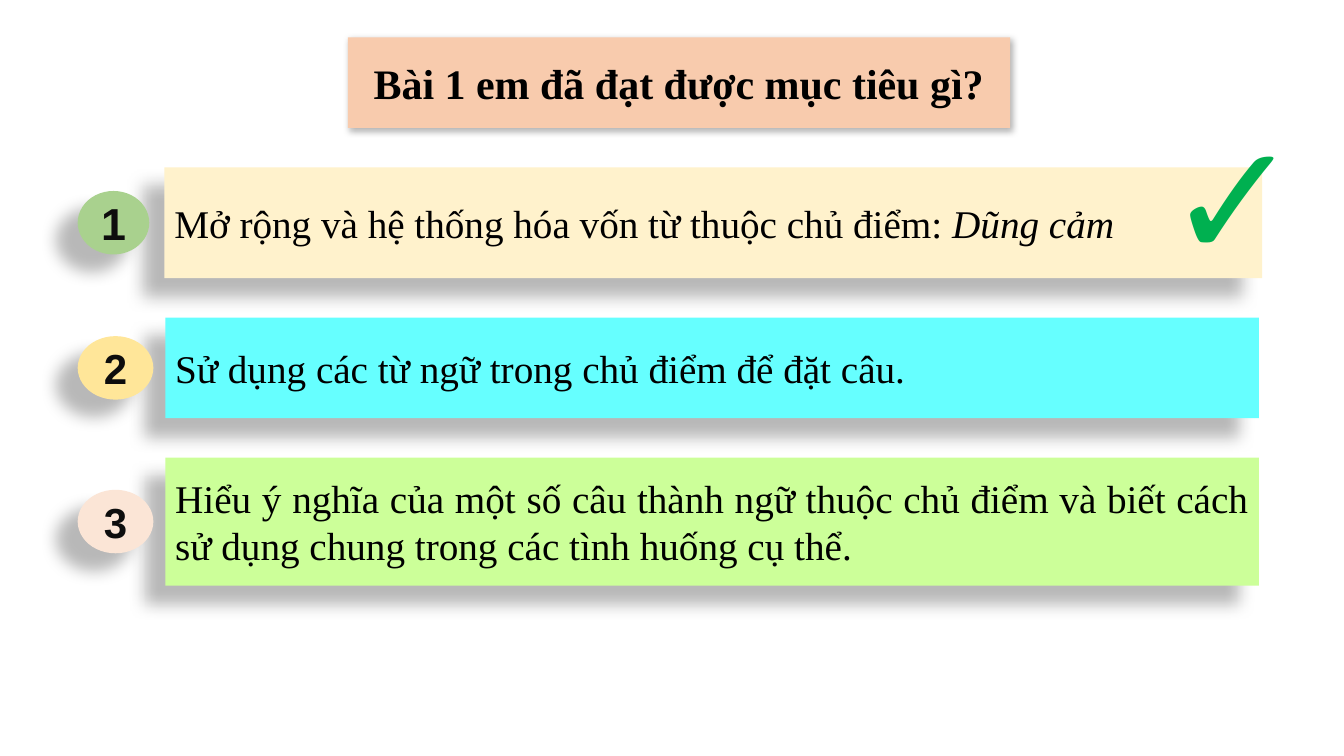
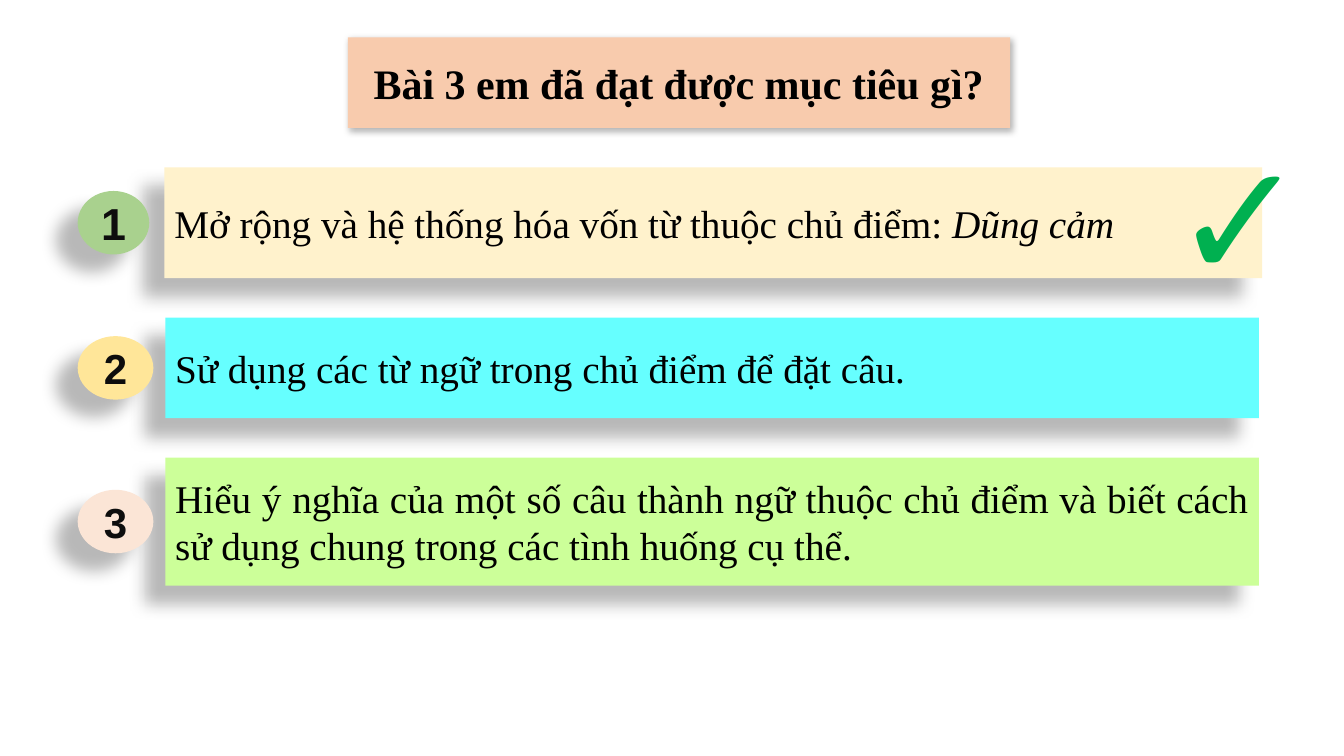
"""Build two lesson slides that review the goals reached in an exercise."""
from lxml.etree import SubElement
from pptx import Presentation
from pptx.dml.color import RGBColor
from pptx.enum.shapes import MSO_SHAPE
from pptx.enum.text import MSO_ANCHOR, MSO_AUTO_SIZE, PP_ALIGN
from pptx.oxml.ns import qn
from pptx.util import Inches, Pt

THEME = {
    "fonts": {
        "title": {"name": "Times New Roman", "size": Pt(30), "bold": True},
        "body": {"name": "Times New Roman", "size": Pt(28)},
        "badge": {"name": "Arial", "bold": True},
        "tick": {"name": "Calibri", "size": Pt(115)},
    },
    "inks": {"title": "000000", "body": "000000", "badge": "0D0D0D", "tick": "00B050"},
    "title": "F8CBAD",
    "shadows": {
        "title": {"blur": 4.5, "dist": 2.6, "angle": 53, "alpha": 30},
        "goal": {"blur": 11.8, "dist": 19.7, "angle": 141, "alpha": 28},
    },
}

GOALS = [
    {"bar": "FFF2CC", "dot": "A9D18E", "size": 32, "left": 12.23, "wide": 81.68,
     "high": 14.67, "dot_wide": 5.33,
     "text": [("Mở rộng và hệ thống hóa vốn từ thuộc chủ điểm: ", False), ("Dũng cảm", True)]},
    {"bar": "66FFFF", "dot": "FFE699", "size": 30, "left": 12.3, "wide": 81.38,
     "high": 13.33, "dot_wide": 5.63,
     "text": [("Sử dụng các từ ngữ trong chủ điểm để đặt câu.", False)]},
    {"bar": "CCFF99", "dot": "FBE5D6", "size": 30, "left": 12.3, "wide": 81.38,
     "high": 16.93, "dot_wide": 5.63,
     "text": [("Hiểu ý nghĩa của một số câu thành ngữ thuộc chủ điểm và biết cách "
               "sử dụng chung trong các tình huống cụ thể.", False)]},
]
PAGES = [
    {"title": "Bài 1 em đã đạt được mục tiêu gì?", "tick": (86.03, 12.27)},
    {"title": "Bài 3 em đã đạt được mục tiêu gì?", "tick": (86.48, 14.93)},
]
TOP, GAP = 22.13, 5.2
DOT_LEFT, DOT_HIGH = 5.78, 8.4

deck = Presentation()
deck.slide_width, deck.slide_height = Inches(13.333), Inches(7.5)
COL, ROW = deck.slide_width / 100, deck.slide_height / 100


def write(shape, style, parts, align, **extra):
    """Fill a shape with runs in one of the theme's text styles."""
    frame = shape.text_frame
    frame.word_wrap = True
    line = frame.paragraphs[0]
    line.alignment = align
    for text, slant in parts:
        run = line.add_run()
        run.text = text
        look = {**THEME["fonts"][style], "italic": slant, **extra}
        for key, value in look.items():
            setattr(run.font, key, value)
        run.font.color.rgb = RGBColor.from_string(THEME["inks"][style])


def paint(shape, fill, kind):
    """Give a shape its fill and cast shadow, with its text in the middle."""
    shape.fill.solid()
    shape.fill.fore_color.rgb = RGBColor.from_string(fill)
    shape.line.fill.background()
    shape.shadow.inherit = False
    shape.text_frame.vertical_anchor = MSO_ANCHOR.MIDDLE
    cast = THEME["shadows"][kind]
    outer = SubElement(
        shape.element.spPr.find(qn("a:effectLst")), qn("a:outerShdw"),
        blurRad=str(Pt(cast["blur"])), dist=str(Pt(cast["dist"])),
        dir=str(cast["angle"] * 60000), algn="ctr", rotWithShape="0")
    ink = SubElement(outer, qn("a:srgbClr"), val="000000")
    SubElement(ink, qn("a:alpha"), val=str(cast["alpha"] * 1000))


for page in PAGES:
    slide = deck.slides.add_slide(deck.slide_layouts[5])
    title = slide.shapes.title
    spot = {"left": 25.88 * COL, "top": 4.93 * ROW, "width": 49.28 * COL, "height": 12 * ROW}
    for key, value in spot.items():
        setattr(title, key, int(value))
    shell = SubElement(title.element.spPr, qn("a:prstGeom"), prst="roundRect")
    SubElement(shell, qn("a:avLst"))
    paint(title, THEME["title"], "title")
    title.text_frame.auto_size = MSO_AUTO_SIZE.NONE
    write(title, "title", [(page["title"], False)], PP_ALIGN.CENTER)

    top = TOP
    for rank, goal in enumerate(GOALS, 1):
        group = slide.shapes.add_group_shape()
        bar = group.shapes.add_shape(
            MSO_SHAPE.RECTANGLE, int(goal["left"] * COL), int(top * ROW),
            int(goal["wide"] * COL), int(goal["high"] * ROW))
        paint(bar, goal["bar"], "goal")
        write(bar, "body", goal["text"], PP_ALIGN.JUSTIFY)

        dot_top = top + (goal["high"] - DOT_HIGH) / 2
        dot = group.shapes.add_shape(
            MSO_SHAPE.OVAL, int(DOT_LEFT * COL), int(dot_top * ROW),
            int(goal["dot_wide"] * COL), int(DOT_HIGH * ROW))
        paint(dot, goal["dot"], "goal")
        write(dot, "badge", [(str(rank), False)], PP_ALIGN.CENTER, size=Pt(goal["size"]))
        top += goal["high"] + GAP

    left, rise = page["tick"]
    tick = slide.shapes.add_textbox(
        int(left * COL), int(rise * ROW), int(8.4 * COL), int(27.2 * ROW))
    write(tick, "tick", [("✓", False)], PP_ALIGN.LEFT)

deck.save("out.pptx")
